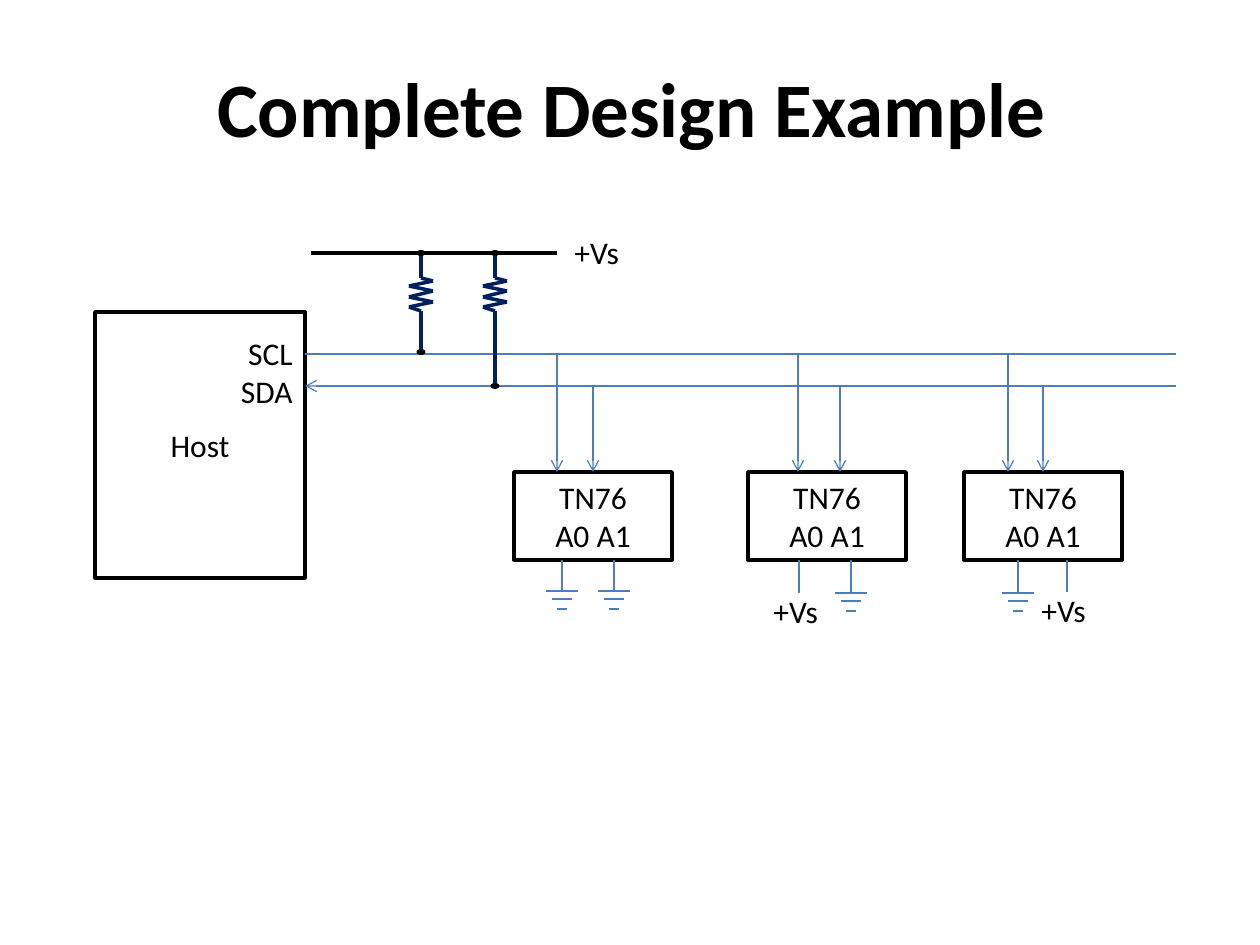
from itertools import pairwise
from lxml import etree
from pptx import Presentation, util as u
from pptx.dml.color import RGBColor
from pptx.enum import shapes, text
from pptx.oxml.ns import qn

# Content: lengths in px, 126 to the inch
COLORS = {"ink": "000000", "wire": "4B7EBC", "coil": "002060"}
HOST = (95, 312, 210, 266)
SCL, SDA, RAIL = 354, 386, 253
BUS_END = 1176
CHIP_TOP, CHIP_W, CHIP_H = 472, 158, 88
CHIP_TEXT = ["TN76", "A0 A1"]
CHIPS = [  # left, SCL tap, SDA tap, pins as (x, kind, end)
    (514, 557, 593, [(562, "gnd", 591), (614, "gnd", 591)]),
    (748, 798, 840, [(799, "vs", 593), (851, "gnd", 593)]),
    (964, 1008, 1043, [(1018, "gnd", 593), (1067, "vs", 592)]),
]
BARS = [(0, 16), (8, 10), (18, 5)]  # ground bars: drop, half width
PULLS = [(421, 352), (495, 386)]  # pull-up resistors: x, bottom
ZIG = [(0, 278), (12, 281), (-12, 286), (12, 291), (-12, 297),
       (12, 302), (-12, 307), (0, 311)]
LABELS = [(562, 227, 100, 50), (761, 586, 73, 50), (1029, 585, 73, 50)]


def px(n):
    return u.Emu(round(n * 914400 / 126))


def color(name):
    return RGBColor.from_string(COLORS[name])


def write(shape, lines, size=18, bold=False, align="LEFT", anchor="TOP"):
    frame = shape.text_frame
    frame.word_wrap = True
    frame.vertical_anchor = text.MSO_ANCHOR[anchor]
    for i, line in enumerate(lines):
        para = frame.paragraphs[0] if i == 0 else frame.add_paragraph()
        para.alignment = text.PP_ALIGN[align]
        run = para.add_run()
        run.text = line
        font = run.font
        font.name, font.size, font.bold = "Calibri", u.Pt(size), bold
        font.color.rgb = color("ink")


def wire(home, x1, y1, x2, y2, tint="wire", width=0.75, arrow=None):
    line = home.add_connector(shapes.MSO_CONNECTOR.STRAIGHT,
                              px(x1), px(y1), px(x2), px(y2))
    line.line.color.rgb = color(tint)
    line.line.width = u.Pt(width)
    if arrow:
        etree.SubElement(line.line._get_or_add_ln(), qn(f"a:{arrow}"), type="arrow")
    etree.SubElement(line._element.spPr, qn("a:effectLst"))


def box(home, rect, lines):
    shape = home.add_shape(shapes.MSO_SHAPE.RECTANGLE, *map(px, rect))
    shape.shadow.inherit = False
    shape.fill.background()
    shape.line.color.rgb = color("ink")
    shape.line.width = u.Pt(2)
    write(shape, lines, align="CENTER", anchor="MIDDLE")


def dot(home, x, y):
    shape = home.add_shape(shapes.MSO_SHAPE.OVAL,
                           px(x - 4.5), px(y - 3), px(9), px(6))
    shape.shadow.inherit = False
    shape.fill.solid()
    shape.fill.fore_color.rgb = color("ink")
    shape.line.fill.background()


def label(home, rect, lines, **form):
    write(home.add_textbox(*map(px, rect)), lines, **form)


def main():
    deck = Presentation()
    deck.slide_width, deck.slide_height = px(1260), px(945)
    slide = deck.slides.add_slide(deck.slide_layouts[5])
    home = slide.shapes

    # Title
    title = home.title
    title.left, title.top, title.width, title.height = map(px, (65, 42, 1134, 130))
    write(title, ["Complete Design Example"], size=44, bold=True,
          align="CENTER", anchor="MIDDLE")

    # Host and its bus lines
    box(home, HOST, ["Host"])
    label(home, (116, 328, 189, 89), ["SCL", "SDA"], align="RIGHT")
    edge = HOST[0] + HOST[2]
    wire(home, edge, SCL, BUS_END, SCL)
    wire(home, edge, SDA, BUS_END, SDA, arrow="headEnd")

    # Chips with bus taps and address pins
    for left, scl, sda, pins in CHIPS:
        box(home, (left, CHIP_TOP, CHIP_W, CHIP_H), CHIP_TEXT)
        for x, y in ((scl, SCL), (sda, SDA)):
            wire(home, x, y, x, CHIP_TOP, arrow="tailEnd")
        for x, kind, end in pins:
            wire(home, x, CHIP_TOP + CHIP_H, x, end)
            if kind == "gnd":
                for drop, half in BARS:
                    wire(home, x - half, end + drop, x + half, end + drop)

    # Supply rail and pull-up resistors
    wire(home, 311, RAIL, 557, RAIL, tint="ink", width=2)
    for x, low in PULLS:
        group = home.add_group_shape().shapes
        points = [(0, RAIL), *ZIG, (0, low)]
        for (dx1, y1), (dx2, y2) in pairwise(points):
            wire(group, x + dx1, y1, x + dx2, y2, tint="coil", width=2)
        for y in (RAIL, low):
            dot(home, x, y)

    # Supply labels
    for rect in LABELS:
        label(home, rect, ["+Vs"])

    deck.save("out.pptx")


if __name__ == "__main__":
    main()
